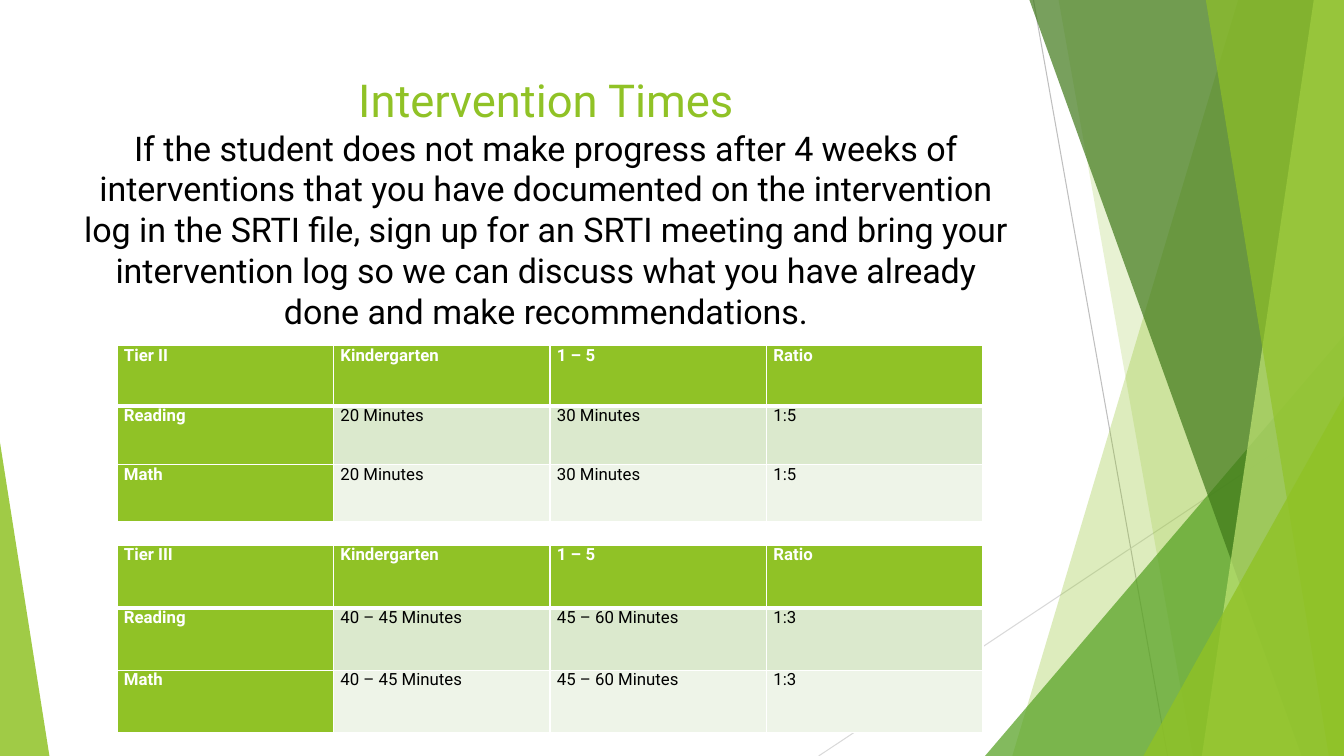
from pptx import Presentation
from pptx.dml.color import RGBColor
from pptx.enum.shapes import MSO_CONNECTOR, MSO_SHAPE
from pptx.enum.text import MSO_ANCHOR, MSO_AUTO_SIZE, PP_ALIGN
from pptx.oxml.ns import qn
from pptx.util import Inches, Pt
from lxml import etree

LINE = MSO_CONNECTOR.STRAIGHT
TRIANGLE = MSO_SHAPE.ISOSCELES_TRIANGLE
TOP, CENTER, LEFT = MSO_ANCHOR.TOP, PP_ALIGN.CENTER, PP_ALIGN.LEFT
NO_FIT = MSO_AUTO_SIZE.NONE

# Content
FONT = "Roboto"
GREEN, WHITE, BLACK = "90C226", "FFFFFF", "000000"
HEAD = "Intervention Times"
BODY = ("If the student does not make progress after 4 weeks of interventions "
        "that you have documented on the intervention log in the SRTI file, "
        "sign up for an SRTI meeting and bring your intervention log so we can "
        "discuss what you have already done and make recommendations.")
LABELS = ["Kindergarten", "1 – 5", "Ratio"]
TIERS = [
    {"name": "Tier II", "top": 3.43, "rows": [0.6, 0.58, 0.56],
     "times": ["20 Minutes", "30 Minutes", "1:5"]},
    {"name": "Tier III", "top": 5.41, "rows": [0.62, 0.62, 0.62],
     "times": ["40 – 45 Minutes", "45 – 60 Minutes", "1:3"]},
]
SUBJECTS = [("Reading", "DBE9CD"), ("Math", "EEF4E8")]

# Backdrop, back to front
WIDE, HIGH = 13.33, 7.5
RULES = [((10.25, 0), (11.58, HIGH), "BFBFBF"),
         ((WIDE, 4.03), (8.12, HIGH), "D9D9D9")]
# Bands reach the right edge: top x, bottom x, colour, opacity
# Wedges stand on the bottom edge: left, top, width, apex, colour, opacity
DECOR = [
    ("band", 12.28, 10.04, GREEN, 30),
    ("band", 10.5, 11.83, GREEN, 20),
    ("wedge", 9.77, 3.33, 3.56, 1, "54A021", 72),
    ("band", 10.21, 12.91, "3F7819", 70),
    ("band", 13.03, 11.92, "C0E474", 70),
    ("band", 11.96, 13.18, GREEN, 65),
    ("wedge", 11.34, 3.93, 1.99, 1, GREEN, 80),
    ("wedge", 0, 4.39, 0.49, 0, GREEN, 85),
]


def color(code):
    return RGBColor.from_string(code)


def paint(shape, code, alpha):
    shape.shadow.inherit = False
    shape.line.fill.background()
    shape.fill.solid()
    shape.fill.fore_color.rgb = color(code)
    tint = shape._element.spPr.find(qn("a:solidFill"))[0]
    etree.SubElement(tint, qn("a:alpha"), val=str(alpha * 1000))


def band(top, base, code, alpha):
    pts = [(Inches(x), Inches(y)) for x, y in
           [(top, 0), (WIDE, 0), (WIDE, HIGH), (base, HIGH)]]
    build = shapes.build_freeform(*pts[0], scale=1)
    build.add_line_segments(pts[1:], close=True)
    paint(build.convert_to_shape(), code, alpha)


def wedge(left, top, width, apex, code, alpha):
    box = [Inches(n) for n in (left, top, width, HIGH - top)]
    shape = shapes.add_shape(TRIANGLE, *box)
    shape.adjustments[0] = apex
    paint(shape, code, alpha)


def write(para, text, size, code, bold=False):
    run = para.add_run()
    run.text = text
    run.font.name, run.font.size, run.font.bold = FONT, Pt(size), bold
    run.font.color.rgb = color(code)


def border(cell, head):
    props = cell._tc.get_or_add_tcPr()
    for side in "LRTB":
        width = 3 if head and side == "B" else 1
        edge = etree.SubElement(props, qn("a:ln" + side), w=str(Pt(width)))
        fill = etree.SubElement(edge, qn("a:solidFill"))
        etree.SubElement(fill, qn("a:srgbClr"), val=WHITE)


def grid(tier):
    data = [[tier["name"]] + LABELS]
    data += [[name] + tier["times"] for name, _ in SUBJECTS]
    rows = tier["rows"]
    box = [Inches(n) for n in (1.16, tier["top"], 8.59, sum(rows))]
    table = shapes.add_table(len(data), len(data[0]), *box).table
    for r, line in enumerate(data):
        table.rows[r].height = Inches(rows[r])
        for c, text in enumerate(line):
            cell = table.cell(r, c)
            key = r == 0 or c == 0
            border(cell, r == 0)
            cell.fill.solid()
            cell.fill.fore_color.rgb = color(GREEN if key else SUBJECTS[r - 1][1])
            cell.margin_left = cell.margin_right = Inches(0.07)
            cell.margin_top = cell.margin_bottom = 0
            cell.vertical_anchor = TOP
            para = cell.text_frame.paragraphs[0]
            para.alignment = LEFT
            write(para, text, 12, WHITE if key else BLACK, key)


# Slide
deck = Presentation()
deck.slide_width, deck.slide_height = Inches(WIDE), Inches(HIGH)
slide = deck.slides.add_slide(deck.slide_layouts[5])
shapes = slide.shapes

# Lines and green panels
for start, end, code in RULES:
    rule = shapes.add_connector(LINE, *[Inches(n) for n in start + end])
    rule.line.color.rgb = color(code)
    rule.line.width = Pt(0.75)
    etree.SubElement(rule._element.spPr, qn("a:effectLst"))
for kind, *args in DECOR:
    (band if kind == "band" else wedge)(*args)

# Title
title = shapes.title
title.left, title.top = Inches(0.69), Inches(0.67)
title.width, title.height = Inches(9.45), Inches(1.76)
frame = title.text_frame
frame.word_wrap, frame.auto_size, frame.vertical_anchor = True, NO_FIT, TOP
para = frame.paragraphs[0]
para.alignment = CENTER
write(para, HEAD, 32.4, GREEN)
para.add_line_break()
write(para, BODY, 24.3, BLACK)

# Tables
for tier in TIERS:
    grid(tier)

deck.save("out.pptx")
